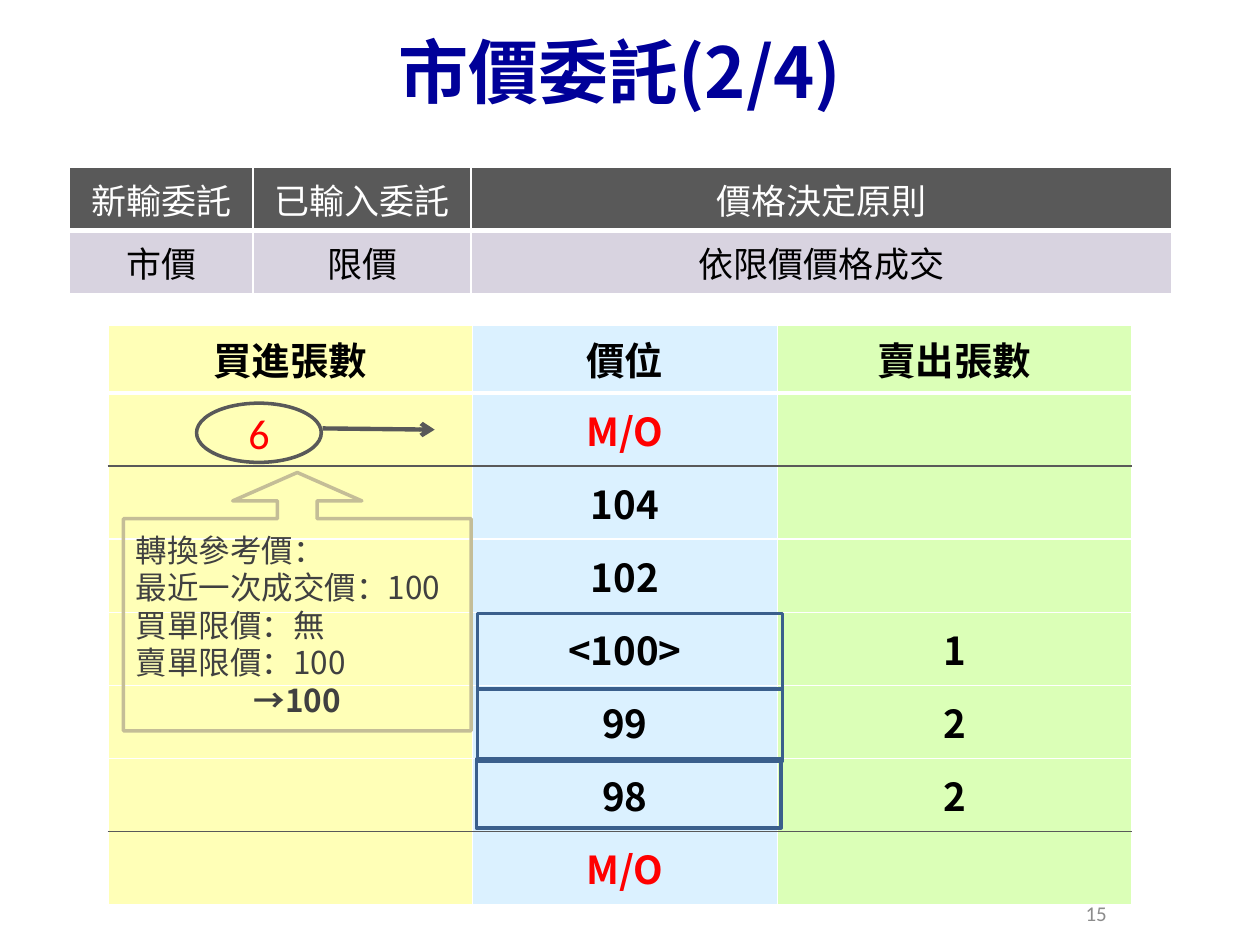
from lxml.etree import SubElement
from pptx import Presentation
from pptx.dml.color import RGBColor
from pptx.enum.shapes import MSO_CONNECTOR as Link, MSO_SHAPE as Form
from pptx.enum.text import MSO_ANCHOR as Anchor, PP_ALIGN as Align
from pptx.oxml.ns import qn
from pptx.util import Inches, Pt

NAVY = RGBColor(0x00, 0x00, 0x99)
BLACK = RGBColor(0x00, 0x00, 0x00)
WHITE = RGBColor(0xFF, 0xFF, 0xFF)
RED = RGBColor(0xFF, 0x00, 0x00)
DARK = RGBColor(0x59, 0x59, 0x59)
INK = RGBColor(0x40, 0x40, 0x40)
GRAY = RGBColor(0x8C, 0x8C, 0x8C)
LILAC = RGBColor(0xD8, 0xD3, 0xE0)
YELLOW = RGBColor(0xFF, 0xFF, 0x99)
SKY = RGBColor(0xCC, 0xEC, 0xFF)
GREEN = RGBColor(0xCC, 0xFF, 0x99)
BLUE = RGBColor(0x3A, 0x5F, 0x8C)
TAN = RGBColor(0xC4, 0xBD, 0x97)
CJK, LATIN = "Noto Sans CJK SC", "Calibri"


def box(*sizes):
    return [Inches(size) for size in sizes]


class Deck:
    def __init__(self):
        self.prs = Presentation()
        self.prs.slide_width, self.prs.slide_height = box(10, 7.5)
        self.slide = self.prs.slides.add_slide(self.prs.slide_layouts[5])
        self.shapes = self.slide.shapes

    def text(self, frame, text, size, color, bold=False, face=CJK, align=Align.CENTER):
        frame.text = text
        for para in frame.paragraphs:
            para.alignment = align
            for run in para.runs:
                font = run.font
                font.name, font.size, font.bold = face, Pt(size), bold
                font.color.rgb = color
                SubElement(font._element, qn("a:ea"), typeface=face)

    def title(self, text, *place):
        title = self.shapes.title
        title.left, title.top, title.width, title.height = box(*place)
        title.text_frame.vertical_anchor = Anchor.MIDDLE
        self.text(title.text_frame, text, 40, NAVY, True)

    def label(self, text, *place):
        frame = self.shapes.add_textbox(*box(*place)).text_frame
        frame.word_wrap = True
        frame.vertical_anchor = Anchor.MIDDLE
        self.text(frame, text, 12, GRAY, face=LATIN)

    def grid(self, left, top, cols, rows):
        frame = self.shapes.add_table(len(rows), len(cols),
                                      *box(left, top, sum(cols), sum(rows)))
        table = frame.table
        for col, width in zip(table.columns, cols):
            col.width = Inches(width)
        for row, height in zip(table.rows, rows):
            row.height = Inches(height)
        return table

    def cell(self, cell, fill, alpha=None, **edges):
        """Set borders (white 1 pt unless given as T or B) and fill."""
        props = cell._tc.get_or_add_tcPr()
        for side in "LRTB":
            color, width = edges.get(side, (WHITE, 1))
            line = SubElement(props, qn(f"a:ln{side}"), w=str(Pt(width)))
            solid = SubElement(line, qn("a:solidFill"))
            SubElement(solid, qn("a:srgbClr"), val=str(color))
        cell.fill.solid()
        cell.fill.fore_color.rgb = fill
        if alpha:
            tint = props.find(qn("a:solidFill")).find(qn("a:srgbClr"))
            SubElement(tint, qn("a:alpha"), val=str(alpha * 1000))

    def shape(self, form, color, *place):
        shape = self.shapes.add_shape(form, *box(*place))
        shape.shadow.inherit = False
        shape.fill.background()
        shape.line.color.rgb = color
        shape.line.width = Pt(2)
        shape.text_frame.vertical_anchor = Anchor.MIDDLE
        return shape

    def arrow(self, color, *ends):
        link = self.shapes.add_connector(Link.STRAIGHT, *box(*ends))
        link.line.color.rgb = color
        link.line.width = Pt(2.5)
        SubElement(link.line._get_or_add_ln(), qn("a:tailEnd"), type="arrow")
        SubElement(link._element.spPr, qn("a:effectLst"))


def rules(deck):
    table = deck.grid(0.55, 1.33, [1.46, 1.73, 5.56], [0.5, 0.5])
    rows = [(("新輸委託", "已輸入委託", "價格決定原則"), DARK, WHITE, 3),
            (("市價", "限價", "依限價價格成交"), LILAC, BLACK, 1)]
    for r, (texts, fill, color, width) in enumerate(rows):
        for c, text in enumerate(texts):
            cell = table.cell(r, c)
            deck.cell(cell, fill, B=(WHITE, width))
            deck.text(cell.text_frame, text, 20, color)


def book(deck):
    """Order book: buy lots, price, sell lots."""
    rows = [("買進張數", "價位", "賣出張數"), ("", "M/O", ""), ("", "104", ""),
            ("", "102", ""), ("", "<100>", "1"), ("", "99", "2"),
            ("", "98", "2"), ("", "M/O", "")]
    table = deck.grid(0.86, 2.58, [2.89, 2.42, 2.81], [0.54] + [0.58] * 7)
    seams = {1: (WHITE, 3), 2: (DARK, 1), 7: (DARK, 1)}
    for r, texts in enumerate(rows):
        for c, (text, fill) in enumerate(zip(texts, (YELLOW, SKY, GREEN))):
            cell = table.cell(r, c)
            deck.cell(cell, fill, 70, T=seams.get(r, (WHITE, 1)),
                      B=seams.get(r + 1, (WHITE, 1)))
            cell.vertical_anchor = Anchor.MIDDLE
            color = RED if text == "M/O" else BLACK
            deck.text(cell.text_frame, text, 22, color, True)


def note(deck):
    call = deck.shape(Form.UP_ARROW_CALLOUT, TAN, 0.98, 3.75, 2.76, 2.05)
    for i, value in enumerate((0.154, 0.25, 0.11, 0.821)):
        call.adjustments[i] = value
    lines = ["轉換參考價：", "最近一次成交價：100", "買單限價：無", "賣單限價：100", "→100"]
    deck.text(call.text_frame, "\n".join(lines), 18, INK, align=Align.LEFT)
    for para in call.text_frame.paragraphs:
        para.line_spacing = Pt(21.5)
    para.alignment = Align.CENTER
    para.runs[0].font.bold = True


def main():
    deck = Deck()
    deck.title("市價委託(2/4)", 0.67, 0.21, 8.5, 0.7)
    deck.label("15", 7.66, 7, 2.08, 0.5)
    rules(deck)
    book(deck)
    lots = deck.shape(Form.OVAL, DARK, 1.56, 3.2, 0.99, 0.47)
    deck.text(lots.text_frame, "6", 24, RED, face=LATIN)
    deck.arrow(DARK, 2.56, 3.4, 3.45, 3.41)
    for left, top, height in ((3.78, 6.02, 0.55), (3.79, 5.47, 0.57), (3.79, 4.87, 0.6)):
        deck.shape(Form.RECTANGLE, BLUE, left, top, 2.42, height)
    note(deck)
    deck.prs.save("out.pptx")


if __name__ == "__main__":
    main()
